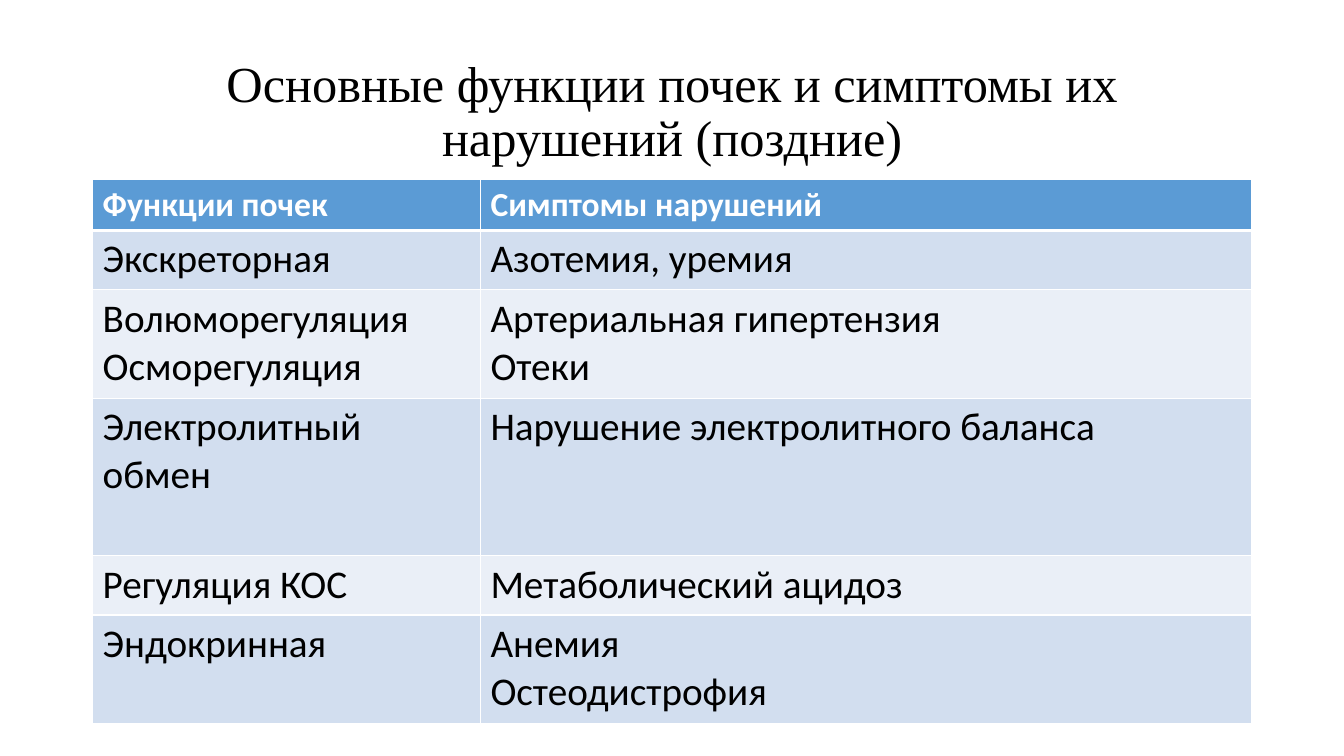
from lxml.etree import SubElement
from pptx import Presentation
from pptx.dml.color import RGBColor
from pptx.enum.text import MSO_ANCHOR, PP_ALIGN
from pptx.oxml.ns import qn
from pptx.util import Pt

TITLE = "Основные функции почек и симптомы их нарушений (поздние)"
ROWS = [
    (["Функции почек"], ["Симптомы нарушений"]),
    (["Экскреторная"], ["Азотемия, уремия"]),
    (["Волюморегуляция", "Осморегуляция"], ["Артериальная гипертензия", "Отеки"]),
    (["Электролитный обмен"], ["Нарушение электролитного баланса"]),
    (["Регуляция КОС"], ["Метаболический ацидоз"]),
    (["Эндокринная"], ["Анемия", "Остеодистрофия"]),
]
COLUMN_WIDTHS = [277, 551]
ROW_HEIGHTS = [36.5, 42.3, 77.6, 112.5, 42.3, 77.6]
LEFT, WIDTH = 66.2, 828


def color(code):
    return RGBColor.from_string(code)


class SlideBuilder:
    title_font, body_font = "Times New Roman", "Calibri"
    dark, light = "000000", "FFFFFF"
    header_fill, bands = "5B9BD5", ("D2DEEF", "EAEFF7")

    def __init__(self, page):
        self.page = page

    def add_span(self, para, text, font, size, code, bold=False):
        span = para.add_run()
        span.text = text
        span.font.name = font
        span.font.size = Pt(size)
        span.font.bold = bold
        span.font.color.rgb = color(code)

    def title(self, text, left, top, width, height):
        box = self.page.shapes.add_textbox(Pt(left), Pt(top), Pt(width), Pt(height))
        frame = box.text_frame
        frame.word_wrap = True
        frame.vertical_anchor = MSO_ANCHOR.MIDDLE
        para = frame.paragraphs[0]
        para.alignment = PP_ALIGN.CENTER
        para.line_spacing = 0.9
        self.add_span(para, text, self.title_font, 36, self.dark)

    def borders(self, cell, top, bottom):
        """Draw the four cell borders; top and bottom are line widths in points."""
        properties = cell._tc.get_or_add_tcPr()
        for side, width in (("L", 1), ("R", 1), ("T", top), ("B", bottom)):
            line = SubElement(properties, qn(f"a:ln{side}"), w=str(Pt(width)))
            fill = SubElement(line, qn("a:solidFill"))
            SubElement(fill, qn("a:srgbClr"), val=self.light)

    def cell(self, cell, lines, row):
        header = row == 0
        self.borders(cell, top=3 if row == 1 else 1, bottom=3 if header else 1)
        cell.fill.solid()
        cell.fill.fore_color.rgb = color(
            self.header_fill if header else self.bands[(row - 1) % 2])
        frame = cell.text_frame
        for index, text in enumerate(lines):
            para = frame.add_paragraph() if index else frame.paragraphs[0]
            self.add_span(para, text, self.body_font, 24 if header else 28,
                          self.light if header else self.dark, header)

    def table(self, rows, left, top, widths, heights):
        table = self.page.shapes.add_table(
            len(rows), len(widths), Pt(left), Pt(top),
            Pt(sum(widths)), Pt(sum(heights))).table
        for column, width in zip(table.columns, widths):
            column.width = Pt(width)
        for row, (texts, height) in enumerate(zip(rows, heights)):
            table.rows[row].height = Pt(height)
            for column, lines in enumerate(texts):
                self.cell(table.cell(row, column), lines, row)


def main():
    deck = Presentation()
    deck.slide_width, deck.slide_height = Pt(960), Pt(540)
    builder = SlideBuilder(deck.slides.add_slide(deck.slide_layouts[6]))
    builder.title(TITLE, LEFT, 28.8, WIDTH, 104.4)
    builder.table(ROWS, LEFT, 128.2, COLUMN_WIDTHS, ROW_HEIGHTS)
    deck.save("out.pptx")


if __name__ == "__main__":
    main()
